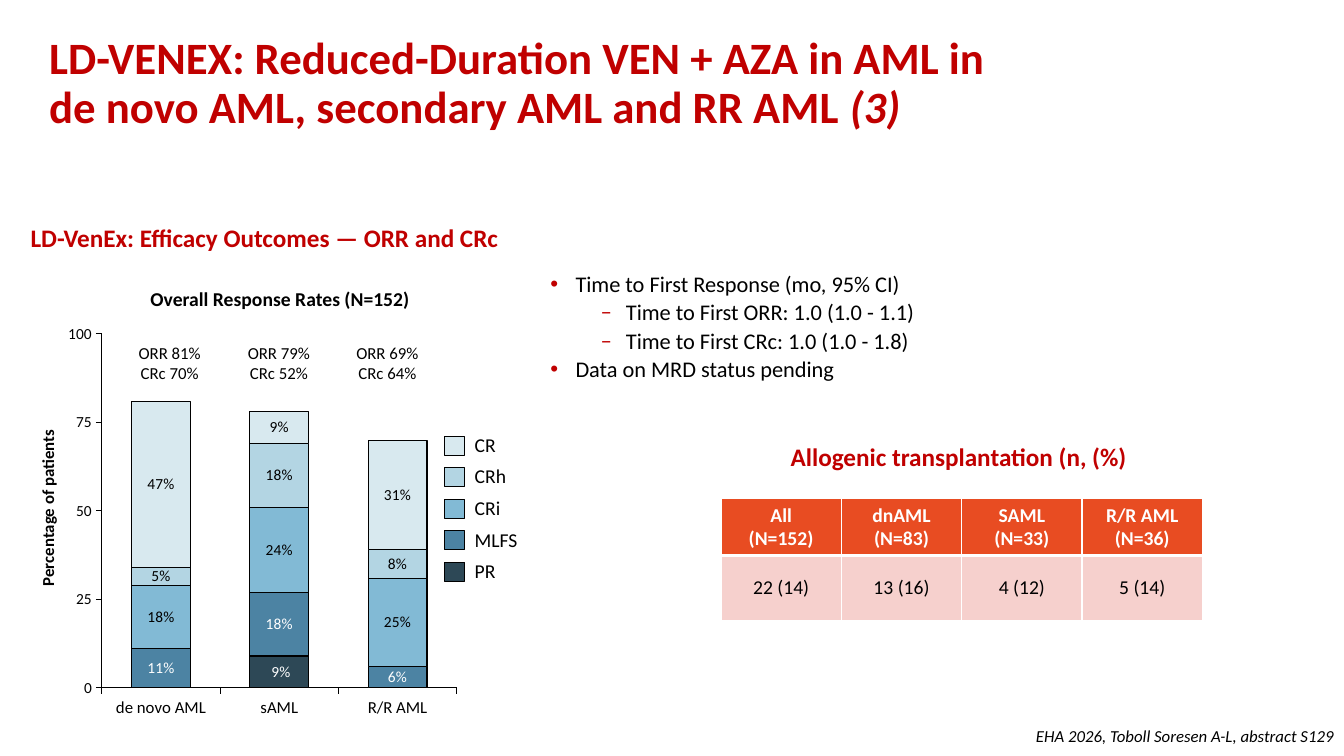
"""Builds the LD-VENEX efficacy slide: response chart, key points and transplantation table."""
from dataclasses import dataclass

from lxml import etree
from pptx import Presentation, util as u
from pptx.chart.data import CategoryChartData
from pptx.dml.color import RGBColor
from pptx.enum import chart as charts, shapes, text
from pptx.oxml import parse_xml
from pptx.oxml.ns import nsdecls, qn

FONT = "Calibri"
COLORS = {
    "red": "C00000", "black": "000000", "white": "FFFFFF",
    "header": "E84C22", "cell": "F6D0CD",
    "PR": "2D4856", "MLFS": "4C83A3", "CRi": "82BAD5", "CRh": "B3D5E3", "CR": "D8E9EF",
}
LEFT, CENTER, RIGHT = text.PP_ALIGN.LEFT, text.PP_ALIGN.CENTER, text.PP_ALIGN.RIGHT


@dataclass(frozen=True)
class Span:
    words: str
    size: float
    color: str = "black"
    bold: bool = False
    italic: bool = False


@dataclass(frozen=True)
class Label:
    left: float
    top: float
    width: float
    height: float
    lines: tuple[tuple[Span, ...], ...]
    align: text.PP_ALIGN = CENTER
    rotation: float = 0


@dataclass(frozen=True)
class Response:
    name: str
    values: tuple[int | None, ...]
    ink: str = "black"
    number_format: str = '0"%"'


@dataclass(frozen=True)
class Bullet:
    words: str
    level: int = 0


RESPONSES = (
    Response("PR", (None, 9, None), "white", '" "0"%"'),
    Response("MLFS", (11, 18, 6), "white"),
    Response("CRi", (18, 24, 25)),
    Response("CRh", (5, 18, 8)),
    Response("CR", (47, 9, 31)),
)
COHORTS = ("de novo AML", "sAML", "R/R AML")
RATES = ((89.5, "ORR 81%", "CRc 70%"), (167.5, "ORR 79%", "CRc 52%"), (245, "ORR 69%", "CRc 64%"))
BULLETS = (
    Bullet("Time to First Response (mo, 95% CI)"),
    Bullet("Time to First ORR: 1.0 (1.0 - 1.1)", 1),
    Bullet("Time to First CRc: 1.0 (1.0 - 1.8)", 1),
    Bullet("Data on MRD status pending"),
)
TRANSPLANTS = (
    ("All", "(N=152)", "22 (14)"),
    ("dnAML", "(N=83)", "13 (16)"),
    ("SAML", "(N=33)", "4 (12)"),
    ("R/R AML", "(N=36)", "5 (14)"),
)
LABELS = (
    Label(730, 515, 230, 21.6,
          ((Span("EHA 2026, Toboll Soresen A-L, abstract S129", 12, italic=True),),), RIGHT),
    Label(12.2, 155.5, 353.5, 29,
          ((Span("LD-VenEx: Efficacy Outcomes — ORR and CRc", 18, "red", True),),)),
    Label(93, 201.6, 214, 25, ((Span("Overall Response Rates (N=152)", 14, bold=True),),)),
    Label(-31.7, 351.4, 132.5, 23, ((Span("Percentage of patients", 12, bold=True),),),
          rotation=270),
    Label(556.5, 311.8, 256.5, 29,
          ((Span("Allogenic transplantation (n, (%)", 18, "red", True),),)),
    *(Label(left, 241.2, 63.4, 38, ((Span(orr, 12),), (Span(crc, 12),)))
      for left, orr, crc in RATES),
)


def rgb(name: str) -> RGBColor:
    return RGBColor.from_string(COLORS[name])


def style(font, size: float, color: str = "black", bold: bool = False, italic: bool = False) -> None:
    font.name, font.size, font.bold, font.italic = FONT, u.Pt(size), bold, italic
    font.color.rgb = rgb(color)


def add_span(para, span: Span) -> None:
    run = para.add_run()
    run.text = span.words
    style(run.font, span.size, span.color, span.bold, span.italic)


def next_para(frame, index: int):
    return frame.add_paragraph() if index else frame.paragraphs[0]


def place(left: float, top: float, width: float, height: float) -> tuple[u.Pt, ...]:
    return u.Pt(left), u.Pt(top), u.Pt(width), u.Pt(height)


def add_label(page, label: Label):
    box = page.shapes.add_textbox(*place(label.left, label.top, label.width, label.height))
    box.rotation = label.rotation
    box.text_frame.word_wrap = False
    for index, line in enumerate(label.lines):
        para = next_para(box.text_frame, index)
        para.alignment = label.align
        for span in line:
            add_span(para, span)
    return box


def add_rect(page, left: float, top: float, width: float, height: float, fill: str, line: str):
    rect = page.shapes.add_shape(shapes.MSO_SHAPE.RECTANGLE, *place(left, top, width, height))
    rect.shadow.inherit = False
    rect.fill.solid()
    rect.fill.fore_color.rgb = rgb(fill)
    rect.line.color.rgb = rgb(line)
    rect.line.width = u.Pt(0.75)
    return rect


def add_title(page) -> None:
    words = "LD-VENEX: Reduced-Duration VEN + AZA in AML in de novo AML, secondary AML and RR AML "
    box = add_label(page, Label(0, -0.7, 741, 122.4, (
        (Span(words, 32, "red", True), Span("(3)", 32, "red", True, True)),), LEFT))
    box.text_frame.word_wrap = True
    box.text_frame.vertical_anchor = text.MSO_ANCHOR.MIDDLE
    para = box.text_frame.paragraphs[0]
    para.line_spacing = 0.9
    para._p.get_or_add_pPr().set("marL", str(u.Pt(28)))


def add_bullets(page) -> None:
    frame = add_rect(page, 386, 191.5, 289.5, 88, "white", "white").text_frame
    frame.word_wrap = False
    frame.vertical_anchor = text.MSO_ANCHOR.TOP
    for index, bullet in enumerate(BULLETS):
        para = next_para(frame, index)
        props = para._p.get_or_add_pPr()
        props.set("marL", str(u.Pt(18 + 36 * bullet.level)))
        props.set("indent", str(u.Pt(-18)))
        color = etree.SubElement(props, qn("a:buClr"))
        etree.SubElement(color, qn("a:srgbClr"), val=COLORS["red"])
        etree.SubElement(props, qn("a:buFont"), typeface=FONT if bullet.level else "Arial")
        etree.SubElement(props, qn("a:buChar"), char="•‒"[bullet.level])
        para.level, para.alignment, para.line_spacing = bullet.level, LEFT, 0.9
        para.space_before = u.Pt(3 if index else 0)
        add_span(para, Span(bullet.words, 16))


def add_response_chart(page) -> None:
    data = CategoryChartData()
    data.categories = COHORTS
    for response in RESPONSES:
        data.add_series(response.name, response.values)
    chart = page.shapes.add_chart(
        charts.XL_CHART_TYPE.COLUMN_STACKED, *place(42.5, 226, 288.7, 292.3), data).chart
    chart.has_legend = chart.has_title = False
    style(chart.font, 10)
    for axis, size in ((chart.category_axis, 12), (chart.value_axis, 11)):
        axis.has_major_gridlines = False
        axis.major_tick_mark = charts.XL_TICK_MARK.OUTSIDE
        axis.format.line.color.rgb = rgb("black")
        axis.format.line.width = u.Pt(0.75)
        style(axis.tick_labels.font, size)
    scale = chart.value_axis
    scale.minimum_scale, scale.maximum_scale, scale.major_unit = 0, 100, 25
    plot = chart.plots[0]
    plot.gap_width, plot.overlap, plot.vary_by_categories = 101, 100, False
    for series, response in zip(plot.series, RESPONSES):
        series.format.fill.solid()
        series.format.fill.fore_color.rgb = rgb(response.name)
        series.format.line.color.rgb = rgb("black")
        series.format.line.width = u.Pt(0.75)
        labels = series.data_labels
        labels.show_value = True
        labels.number_format, labels.number_format_is_linked = response.number_format, False
        style(labels.font, 11, response.ink)
    area = chart._chartSpace.chart.plotArea
    for old in area.findall(qn("c:layout")):
        area.remove(old)
    bounds = "".join(f'<c:{key} val="{value}"/>' for key, value in (
        ("layoutTarget", "inner"), ("xMode", "edge"), ("yMode", "edge"),
        ("x", 0.105), ("y", 0.043), ("w", 0.878), ("h", 0.865)))
    area.insert(0, parse_xml(
        f'<c:layout {nsdecls("c")}><c:manualLayout>{bounds}</c:manualLayout></c:layout>'))


def add_legend(page) -> None:
    for index, response in enumerate(reversed(RESPONSES)):
        top = 311.5 + 22.5 * index
        add_rect(page, 317.5, top, 14.4, 13.7, response.name, "black")
        add_label(page, Label(332, top - 5.8, 48, 25, ((Span(response.name, 14),),), LEFT))


def fill_cell(cell, lines: tuple[str, ...], fill: str, ink: str, bold: bool, rule: float) -> None:
    cell.vertical_anchor = text.MSO_ANCHOR.MIDDLE
    for side, width in (("L", 1), ("R", 1), ("T", 1 if bold else 3), ("B", rule)):
        edge = etree.SubElement(cell._tc.get_or_add_tcPr(), qn(f"a:ln{side}"), w=str(u.Pt(width)))
        etree.SubElement(etree.SubElement(edge, qn("a:solidFill")), qn("a:srgbClr"),
                         val=COLORS["white"])
    cell.fill.solid()
    cell.fill.fore_color.rgb = rgb(fill)
    para = cell.text_frame.paragraphs[0]
    para.alignment = CENTER
    for index, line in enumerate(lines):
        if index:
            para.add_line_break()
        add_span(para, Span(line, 14, ink, bold))


def add_transplant_table(page) -> None:
    table = page.shapes.add_table(2, len(TRANSPLANTS), *place(515, 356, 344, 87)).table
    table.horz_banding = False
    table.rows[0].height, table.rows[1].height = u.Pt(40.5), u.Pt(46.5)
    for column, (group, count, result) in enumerate(TRANSPLANTS):
        table.columns[column].width = u.Pt(86)
        fill_cell(table.cell(0, column), (group, count), "header", "white", True, 3)
        fill_cell(table.cell(1, column), (result,), "cell", "black", False, 1)


def main() -> None:
    deck = Presentation()
    deck.slide_width, deck.slide_height = u.Pt(960), u.Pt(540)
    page = deck.slides.add_slide(deck.slide_layouts[6])
    add_title(page)
    add_bullets(page)
    add_response_chart(page)
    add_legend(page)
    for label in LABELS:
        add_label(page, label)
    add_transplant_table(page)
    deck.save("out.pptx")


if __name__ == "__main__":
    main()
